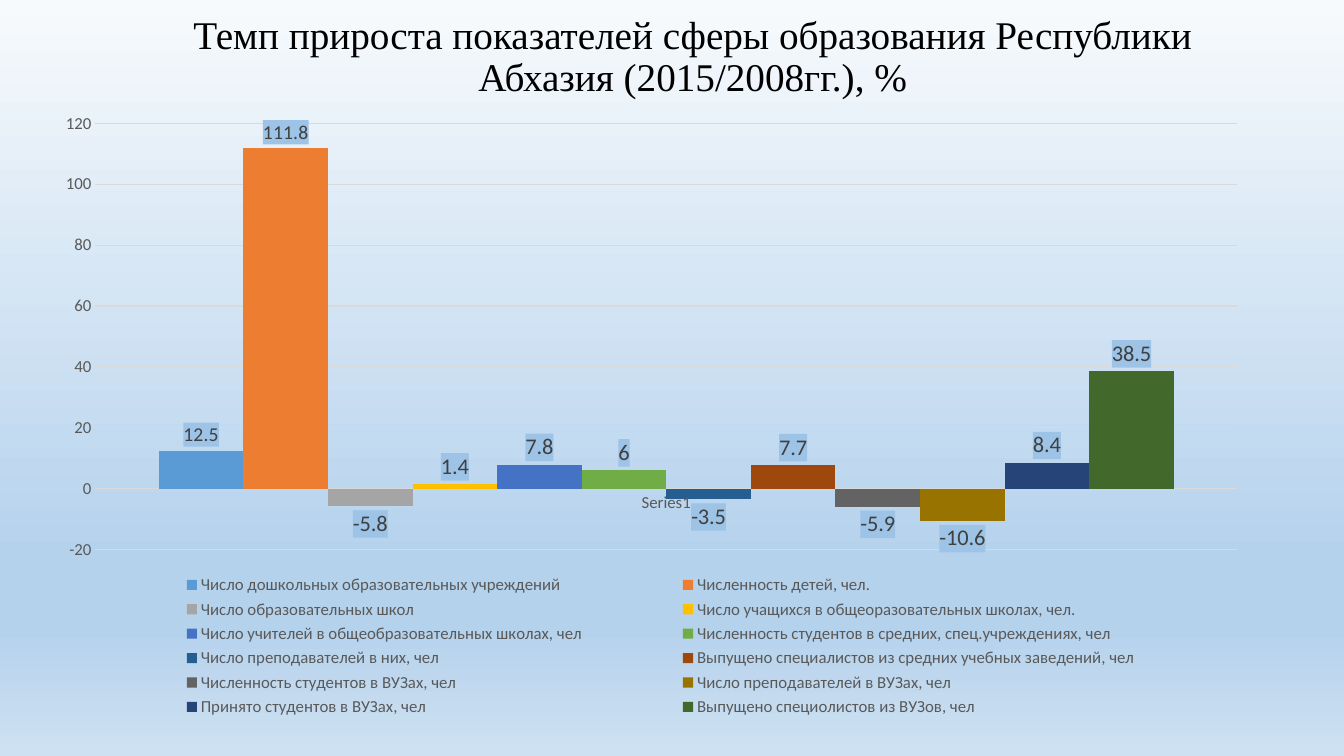
import copy

import lxml.etree
import pptx
import pptx.chart.data
import pptx.dml.color
import pptx.enum.chart
import pptx.enum.text
import pptx.oxml
import pptx.oxml.ns
import pptx.util

Inches = pptx.util.Inches
Pt = pptx.util.Pt
qn = pptx.oxml.ns.qn


def color(hex_string):
    return pptx.dml.color.RGBColor.from_string(hex_string)


def style_font(font, size, hex_string, name="Calibri"):
    font.size = Pt(size)
    font.name = name
    font.bold = False
    font.color.rgb = color(hex_string)


presentation = pptx.Presentation()
presentation.slide_width = Inches(13.33)
presentation.slide_height = Inches(7.5)
slide = presentation.slides.add_slide(presentation.slide_layouts[6])

# Background gradient, from top to bottom
background_stops = [(0, "F7FAFD"), (0.74, "B5D2EC"), (0.83, "B5D2EC"), (1, "CEE1F2")]
fill = slide.background.fill
fill.gradient()
fill.gradient_angle = 270
stop_list = slide.element.find(".//" + qn("a:gsLst"))
while len(stop_list) < len(background_stops):
    stop_list.append(copy.deepcopy(stop_list[0]))
for stop, (position, hex_string) in zip(fill.gradient_stops, background_stops):
    stop.position = position
    stop.color.rgb = color(hex_string)

# Title
title = slide.shapes.add_textbox(Inches(1.12), Inches(0.16), Inches(11.5), Inches(0.82))
title.text_frame.word_wrap = True
title.text_frame.vertical_anchor = pptx.enum.text.MSO_ANCHOR.MIDDLE
paragraph = title.text_frame.paragraphs[0]
paragraph.alignment = pptx.enum.text.PP_ALIGN.CENTER
paragraph.line_spacing = 0.9
run = paragraph.add_run()
run.text = "Темп прироста показателей сферы образования Республики Абхазия (2015/2008гг.), %"
style_font(run.font, 28, "000000", "Times New Roman")

# Chart data: name, growth in percent, bar colour, label size
indicators = [
    ("Число дошкольных образовательных учреждений", 12.5, "5B9BD5", 14),
    ("Численность детей, чел.", 111.8, "ED7D31", 14),
    ("Число образовательных школ", -5.8, "A5A5A5", 16),
    ("Число учащихся в общеоразовательных школах, чел.", 1.4, "FFC000", 16),
    ("Число учителей в общеобразовательных школах, чел", 7.8, "4472C4", 16),
    ("Численность студентов в средних, спец.учреждениях, чел", 6, "70AD47", 16),
    ("Число преподавателей в них, чел", -3.5, "255E91", 16),
    ("Выпущено специалистов из средних учебных заведений, чел", 7.7, "9E480E", 16),
    ("Численность студентов в ВУЗах, чел", -5.9, "636363", 16),
    ("Число преподавателей в ВУЗах, чел", -10.6, "997300", 16),
    ("Принято студентов в ВУЗах, чел", 8.4, "264478", 16),
    ("Выпущено специолистов из ВУЗов, чел", 38.5, "43682B", 16),
]
chart_data = pptx.chart.data.CategoryChartData()
chart_data.categories = ["Series1"]
for name, value, _, _ in indicators:
    chart_data.add_series(name, [value])
chart = slide.shapes.add_chart(
    pptx.enum.chart.XL_CHART_TYPE.COLUMN_CLUSTERED,
    Inches(0.43), Inches(0.98), Inches(12.01), Inches(6.24), chart_data,
).chart
chart.has_title = False
style_font(chart.font, 10, "000000")

# Bars and their labels
plot = chart.plots[0]
plot.vary_by_categories = False
plot.gap_width = 150
plot.overlap = 0
for series, (_, _, hex_string, label_size) in zip(plot.series, indicators):
    series.invert_if_negative = False
    series.format.fill.solid()
    series.format.fill.fore_color.rgb = color(hex_string)
    labels = series.data_labels
    labels.show_value = True
    labels.position = pptx.enum.chart.XL_LABEL_POSITION.OUTSIDE_END
    style_font(labels.font, label_size, "404040")
    label_box = pptx.oxml.parse_xml(
        f'<c:spPr {pptx.oxml.ns.nsdecls("c", "a")}><a:solidFill>'
        '<a:srgbClr val="9DC3E6"/></a:solidFill><a:ln><a:noFill/></a:ln></c:spPr>'
    )
    labels._element.find(qn("c:txPr")).addprevious(label_box)

# Axes and gridlines
for axis in (chart.category_axis, chart.value_axis):
    axis.major_tick_mark = pptx.enum.chart.XL_TICK_MARK.NONE
    axis.minor_tick_mark = pptx.enum.chart.XL_TICK_MARK.NONE
    axis.format.line.fill.background()
    style_font(axis.tick_labels.font, 12, "595959")
value_axis = chart.value_axis
value_axis.minimum_scale = -20
value_axis.maximum_scale = 120
value_axis.major_unit = 20
value_axis.has_major_gridlines = True
value_axis.major_gridlines.format.line.color.rgb = color("D9D9D9")
value_axis.major_gridlines.format.line.width = Pt(0.75)

# Legend
chart.has_legend = True
chart.legend.position = pptx.enum.chart.XL_LEGEND_POSITION.BOTTOM
chart.legend.include_in_layout = False
style_font(chart.legend.font, 12, "595959")

# Placement of plot area and legend, as fractions of the chart
edges = [("xMode", "edge"), ("yMode", "edge")]
placements = [
    ("c:plotArea", 0, [("layoutTarget", "inner")], (0.043, 0.039, 0.943, 0.678)),
    ("c:legend", 1, [], (0.04, 0.75, 0.94, 0.24)),
]
for part_tag, index, target, box in placements:
    part = chart.element.find(".//" + qn(part_tag))
    for old_layout in part.findall(qn("c:layout")):
        part.remove(old_layout)
    layout = lxml.etree.Element(qn("c:layout"))
    manual_layout = lxml.etree.SubElement(layout, qn("c:manualLayout"))
    for tag, setting in target + edges + list(zip("xywh", box)):
        lxml.etree.SubElement(manual_layout, qn("c:" + tag)).set("val", str(setting))
    part.insert(index, layout)

presentation.save("out.pptx")
